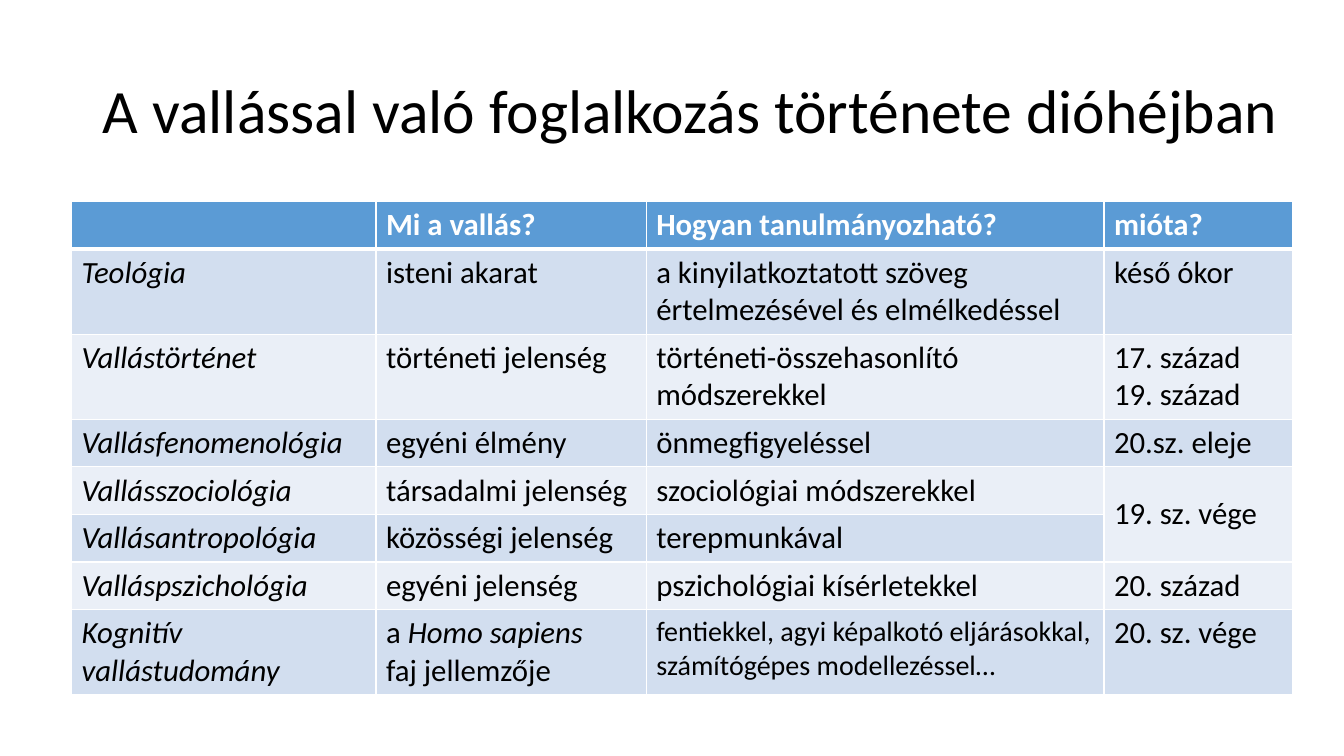
from lxml import etree
from pptx import Presentation
from pptx import util as u
from pptx.dml.color import RGBColor
from pptx.enum import text
from pptx.oxml import ns

TITLE = "A vallással való foglalkozás története dióhéjban"
HEADER = ["", "Mi a vallás?", "Hogyan tanulmányozható?", "mióta?"]
# A None cell is covered by the merged cell above it
FIELDS = [
    ["Teológia", "isteni akarat",
     "a kinyilatkoztatott szöveg értelmezésével és elmélkedéssel", "késő ókor"],
    ["Vallástörténet", "történeti jelenség",
     "történeti-összehasonlító módszerekkel", "17. század\n19. század"],
    ["Vallásfenomenológia", "egyéni élmény", "önmegfigyeléssel", "20.sz. eleje"],
    ["Vallásszociológia", "társadalmi jelenség", "szociológiai módszerekkel", "19. sz. vége"],
    ["Vallásantropológia", "közösségi jelenség", "terepmunkával", None],
    ["Valláspszichológia", "egyéni jelenség", "pszichológiai kísérletekkel", "20. század"],
    ["Kognitív vallástudomány", [("a ", False), ("Homo sapiens\n", True), ("faj jellemzője", False)],
     "fentiekkel, agyi képalkotó eljárásokkal, számítógépes modellezéssel…", "20. sz. vége"],
]
COLUMN_WIDTHS = [3.02, 2.68, 4.54, 1.87]
ROW_HEIGHTS = [0.41] * 7 + [0.7]
HEADER_FILL, BAND_FILLS = "5B9BD5", ["D2DEEF", "EAEFF7"]
WHITE, BLACK = "FFFFFF", "000000"


def color(value):
    return RGBColor.from_string(value)


def write(frame, content, size=22, ink=BLACK, bold=False, italic=False):
    """Fill the first paragraph; content is a string or (text, italic) pairs."""
    para = frame.paragraphs[0]
    para.alignment = text.PP_ALIGN.LEFT
    pairs = [(content, italic)] if isinstance(content, str) else content
    for words, slanted in pairs:
        for index, line in enumerate(words.split("\n")):
            if index:
                para.add_line_break()
            if not line:
                continue
            span = para.add_run()
            span.text = line
            span.font.name = "Calibri"
            span.font.size = u.Pt(size)
            span.font.bold = bold
            span.font.italic = slanted
            span.font.color.rgb = color(ink)
    return para


def set_borders(cell, bottom=1):
    """Draw white cell borders, placed before the fill as the schema asks."""
    properties = cell._tc.get_or_add_tcPr()
    widths = {"lnL": 1, "lnR": 1, "lnT": 1, "lnB": bottom}
    for position, (side, width) in enumerate(widths.items()):
        line = etree.Element(ns.qn("a:" + side), w=str(u.Pt(width)))
        fill = etree.SubElement(line, ns.qn("a:solidFill"))
        etree.SubElement(fill, ns.qn("a:srgbClr"), val=WHITE)
        properties.insert(position, line)


def add_title(page):
    title = page.shapes.title
    title.left, title.top = u.Inches(0.92), u.Inches(0.4)
    title.width, title.height = u.Inches(12.12), u.Inches(1.45)
    frame = title.text_frame
    frame.word_wrap = True
    frame.auto_size = text.MSO_AUTO_SIZE.NONE
    frame.vertical_anchor = text.MSO_ANCHOR.MIDDLE
    write(frame, TITLE, size=44).line_spacing = 0.9


def add_history_table(page):
    rows = [HEADER] + FIELDS
    table = page.shapes.add_table(
        len(rows), len(HEADER), u.Inches(0.71), u.Inches(2),
        u.Inches(sum(COLUMN_WIDTHS)), u.Inches(sum(ROW_HEIGHTS))).table
    for column, width in zip(table.columns, COLUMN_WIDTHS):
        column.width = u.Inches(width)
    for row, height in zip(table.rows, ROW_HEIGHTS):
        row.height = u.Inches(height)

    for r, row in enumerate(rows):
        header = r == 0
        for c, content in enumerate(row):
            cell = table.cell(r, c)
            cell.fill.solid()
            cell.fill.fore_color.rgb = color(HEADER_FILL if header else BAND_FILLS[(r - 1) % 2])
            set_borders(cell, bottom=3 if header else 1)
            if content is None:
                above = table.cell(r - 1, c)
                above.merge(cell)
                above.vertical_anchor = text.MSO_ANCHOR.MIDDLE
            else:
                # The long last method is set slightly smaller
                small = r == len(rows) - 1 and c == 2
                write(cell.text_frame, content, size=20 if small else 22,
                      ink=WHITE if header else BLACK, bold=header, italic=c == 0)


def main():
    deck = Presentation()
    deck.slide_width, deck.slide_height = u.Inches(13.33), u.Inches(7.5)
    page = deck.slides.add_slide(deck.slide_layouts[5])
    add_title(page)
    add_history_table(page)
    deck.save("out.pptx")


if __name__ == "__main__":
    main()
